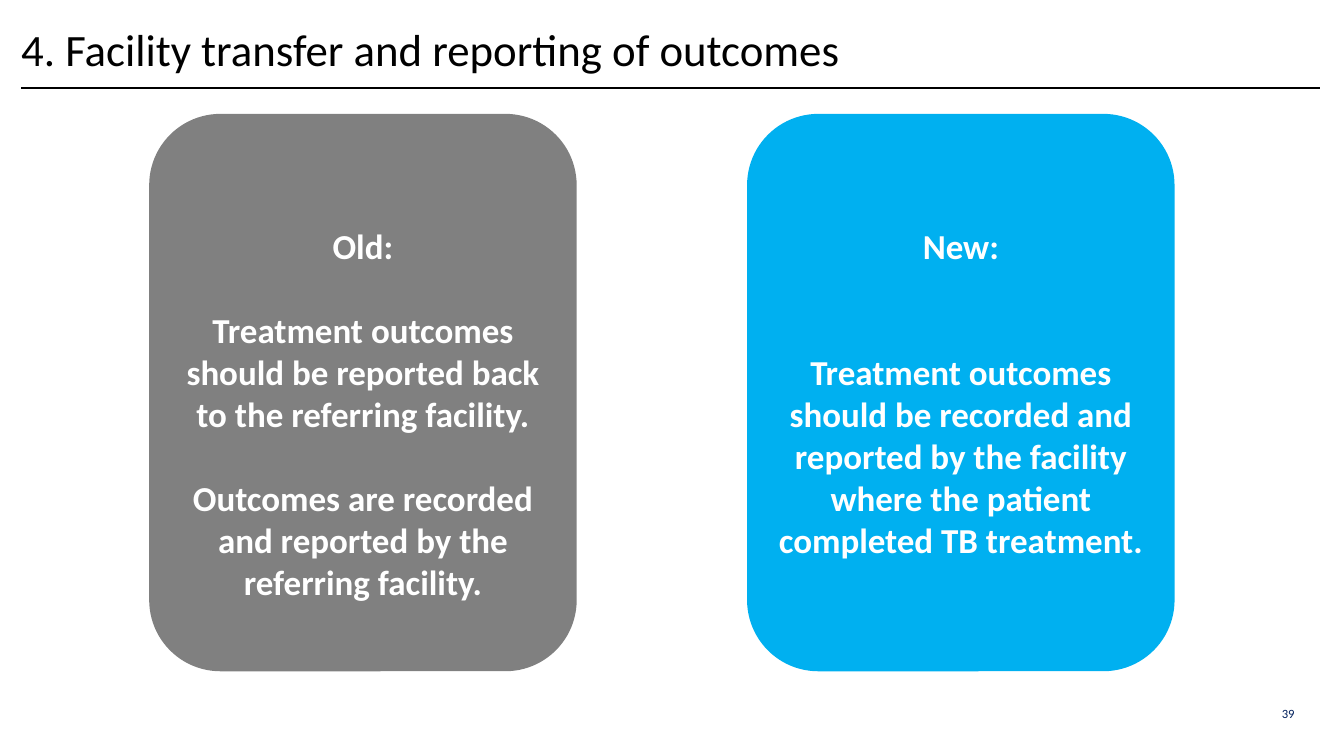
from lxml import etree
from pptx import Presentation
from pptx import util as u
from pptx.dml.color import RGBColor
from pptx.enum import shapes, text
from pptx.oxml.ns import qn

WIDTH, HEIGHT = 13.33, 7.5
FONT = "Calibri"
BLACK = RGBColor(0x00, 0x00, 0x00)
WHITE = RGBColor(0xFF, 0xFF, 0xFF)
NAVY = RGBColor(0x00, 0x20, 0x5C)
GREY = RGBColor(0x80, 0x80, 0x80)
BLUE = RGBColor(0x00, 0xB0, 0xF0)

MARGIN = 0.21
CARD_LEFT, CARD_TOP = 1.48, 1.13
CARD_WIDTH, CARD_HEIGHT = 4.24, 5.53
CARD_PITCH = 5.93
CARD_LINE = 30  # height of one text line on a card, in points

# fill, paragraphs, blank lines above the text, blank lines between paragraphs
CARDS = [
    (GREY, ["Old:",
            "Treatment outcomes should be reported back to the referring facility.",
            "Outcomes are recorded and reported by the referring facility."], 1, 1),
    (BLUE, ["New:",
            "Treatment outcomes should be recorded and reported by the facility "
            "where the patient completed TB treatment."], 0, 2),
]


def inches(box):
    return [u.Inches(length) for length in box]


def style(paragraph, size, color, align, bold=False):
    paragraph.alignment = align
    font = paragraph.font
    font.name, font.size, font.bold = FONT, u.Pt(size), bold
    font.color.rgb = color


def add_label(slide, box, words, size, color, align, anchor):
    """Place one line of text in a box without insets."""
    frame = slide.shapes.add_textbox(*inches(box)).text_frame
    frame.word_wrap = True
    frame.vertical_anchor = anchor
    frame.margin_left = frame.margin_right = 0
    frame.margin_top = frame.margin_bottom = 0
    frame.text = words
    style(frame.paragraphs[0], size, color, align)
    return frame


def add_header(slide, box, words):
    left, top, width, height = box
    title = add_label(slide, box, words, 32, BLACK,
                      text.PP_ALIGN.LEFT, text.MSO_ANCHOR.MIDDLE)
    title.paragraphs[0].line_spacing = 0.9
    rule_y = top + height - 0.07
    rule = slide.shapes.add_connector(
        shapes.MSO_CONNECTOR.STRAIGHT,
        *inches([left, rule_y, left + width - 0.1, rule_y]))
    rule.line.color.rgb = BLACK
    rule.line.width = u.Pt(1.5)
    etree.SubElement(rule._element.spPr, qn("a:effectLst"))


def add_card(slide, box, fill, paragraphs, lines_above, lines_between):
    card = slide.shapes.add_shape(shapes.MSO_SHAPE.ROUNDED_RECTANGLE, *inches(box))
    card.shadow.inherit = False
    card.fill.solid()
    card.fill.fore_color.rgb = fill
    card.line.fill.background()
    frame = card.text_frame
    frame.word_wrap = True
    frame.vertical_anchor = text.MSO_ANCHOR.MIDDLE
    frame.margin_top += u.Pt(lines_above * CARD_LINE)
    frame.text = "\n".join(paragraphs)
    for index, paragraph in enumerate(frame.paragraphs):
        style(paragraph, 25, WHITE, text.PP_ALIGN.CENTER, bold=True)
        if index:
            paragraph.space_before = u.Pt(lines_between * CARD_LINE)


def main():
    prs = Presentation()
    prs.slide_width, prs.slide_height = inches([WIDTH, HEIGHT])
    slide = prs.slides.add_slide(prs.slide_layouts[6])
    add_header(slide, (MARGIN, 0.09, 12.98, 0.85),
               "4. Facility transfer and reporting of outcomes")
    for column, card in enumerate(CARDS):
        left = CARD_LEFT + column * CARD_PITCH
        add_card(slide, (left, CARD_TOP, CARD_WIDTH, CARD_HEIGHT), *card)
    add_label(slide, (12.42, 7, 0.42, 0.35), "39", 9, NAVY,
              text.PP_ALIGN.RIGHT, text.MSO_ANCHOR.TOP)
    prs.save("out.pptx")


if __name__ == "__main__":
    main()
